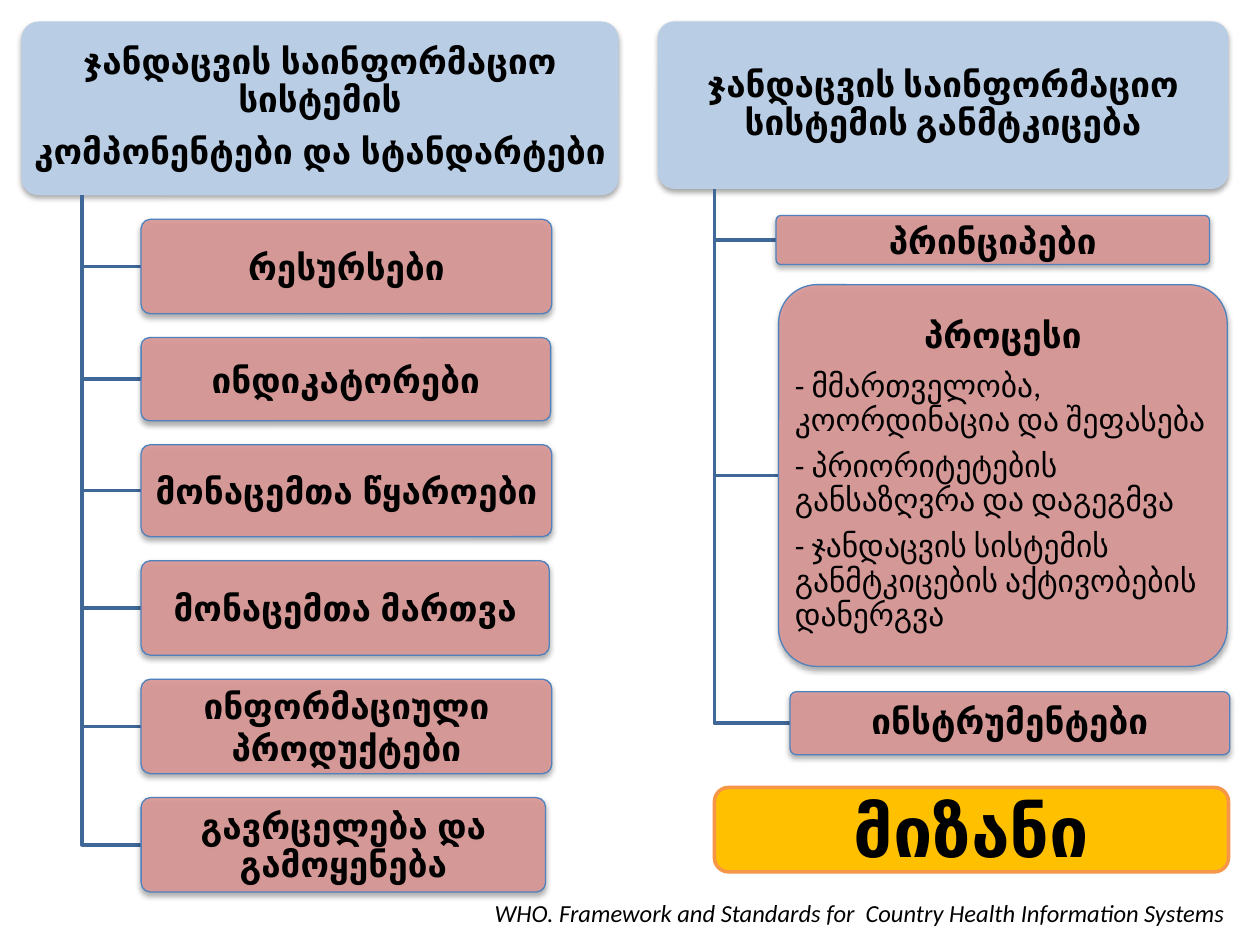
from dataclasses import dataclass

import pptx
import pptx.dml.color
import pptx.enum.shapes
import pptx.enum.text
import pptx.oxml
import pptx.oxml.ns
import pptx.util
from pptx.dml.color import RGBColor
from pptx.util import Inches

BLACK = RGBColor(0x00, 0x00, 0x00)
HEADER_BLUE = RGBColor(0xB9, 0xCD, 0xE5)
ITEM_ROSE = RGBColor(0xD9, 0x96, 0x94)
ITEM_EDGE = RGBColor(0x4F, 0x81, 0xBD)
BRANCH_BLUE = RGBColor(0x3F, 0x67, 0x97)
GOAL_YELLOW = RGBColor(0xFF, 0xC0, 0x00)
GOAL_EDGE = RGBColor(0xF7, 0x96, 0x46)

LEFT = pptx.enum.text.PP_ALIGN.LEFT
CENTER = pptx.enum.text.PP_ALIGN.CENTER
RIGHT = pptx.enum.text.PP_ALIGN.RIGHT
ROUNDED = pptx.enum.shapes.MSO_SHAPE.ROUNDED_RECTANGLE
MIDDLE = pptx.enum.text.MSO_ANCHOR.MIDDLE


@dataclass
class Line:
    text: str
    size: int = 20
    bold: bool = True
    align: pptx.enum.text.PP_ALIGN = CENTER
    tight: bool = True


@dataclass
class Card:
    left: float
    top: float
    width: float
    height: float
    lines: list[Line]


@dataclass
class Branch:
    header: Card
    trunk: float
    font: str
    items: list[Card]


def title(text: str) -> list[Line]:
    return [Line(text, tight=False)]


def step(text: str) -> Line:
    return Line(text, size=18, bold=False, align=LEFT)


COMPONENTS = Branch(
    Card(0.17, 0.17, 4.74, 1.38, [
        Line("ჯანდაცვის საინფორმაციო სისტემის"),
        Line("კომპონენტები და სტანდარტები"),
    ]),
    0.65, "Arial",
    [
        Card(1.12, 1.74, 3.26, 0.75, title("რესურსები")),
        Card(1.12, 2.68, 3.25, 0.66, title("ინდიკატორები")),
        Card(1.12, 3.53, 3.26, 0.73, title("მონაცემთა წყაროები")),
        Card(1.12, 4.45, 3.24, 0.75, title("მონაცემთა მართვა")),
        Card(1.12, 5.39, 3.26, 0.75, title("ინფორმაციული პროდუქტები")),
        Card(1.12, 6.33, 3.21, 0.75,
             title("გავრცელება და") + [Line("გამოყენება")]),
    ],
)
STRENGTHENING = Branch(
    Card(5.22, 0.17, 4.53, 1.33,
         [Line("ჯანდაცვის საინფორმაციო სისტემის განმტკიცება")]),
    5.67, "Calibri",
    [
        Card(6.16, 1.71, 3.44, 0.39, title("პრინციპები")),
        Card(6.18, 2.26, 3.56, 3.03, [
            Line("პროცესი"),
            step("- მმართველობა, კოორდინაცია და შეფასება"),
            step("- პრიორიტეტების განსაზღვრა და დაგეგმვა"),
            step("- ჯანდაცვის სისტემის განმტკიცების აქტივობების დანერგვა"),
        ]),
        Card(6.27, 5.49, 3.49, 0.5, [Line("ინსტრუმენტები")]),
    ],
)


def add_text(para, text: str, *, font: str, size: int, bold: bool = False,
             italic: bool = False, align=CENTER) -> None:
    para.alignment = align
    span = para.add_run()
    span.text = text
    span.font.name = font
    span.font.size = pptx.util.Pt(size)
    span.font.bold = bold
    span.font.italic = italic
    span.font.color.rgb = BLACK


def add_soft_shadow(shape) -> None:
    namespace = pptx.oxml.ns.nsdecls("a")
    effects = pptx.oxml.parse_xml(
        f'<a:effectLst {namespace}><a:outerShdw blurRad="40000" dist="23000" '
        'dir="5400000" rotWithShape="0"><a:srgbClr val="000000">'
        '<a:alpha val="35000"/></a:srgbClr></a:outerShdw></a:effectLst>')
    properties = shape._element.spPr
    for old in properties.findall(pptx.oxml.ns.qn("a:effectLst")):
        properties.remove(old)
    properties.append(effects)


def set_opacity(shape, percent: int) -> None:
    color = shape._element.spPr.find(
        pptx.oxml.ns.qn("a:solidFill") + "/" + pptx.oxml.ns.qn("a:srgbClr"))
    alpha = color.makeelement(pptx.oxml.ns.qn("a:alpha"),
                              {"val": str(percent * 1000)})
    color.append(alpha)


def add_box(page, card: Card, font: str, fill: RGBColor,
            edge: RGBColor | None = None, weight: float = 0.75):
    box = page.shapes.add_shape(ROUNDED, Inches(card.left), Inches(card.top),
                                Inches(card.width), Inches(card.height))
    box.shadow.inherit = False
    box.fill.solid()
    box.fill.fore_color.rgb = fill
    if edge is None:
        box.line.fill.background()
    else:
        box.line.color.rgb = edge
        box.line.width = pptx.util.Pt(weight)
    frame = box.text_frame
    frame.word_wrap = True
    frame.vertical_anchor = MIDDLE
    frame.margin_left = frame.margin_right = Inches(0.04)
    frame.margin_top = frame.margin_bottom = Inches(0.03)
    for index, line in enumerate(card.lines):
        para = frame.add_paragraph() if index else frame.paragraphs[0]
        add_text(para, line.text, font=font, size=line.size, bold=line.bold,
                 align=line.align)
        if line.tight:
            para.line_spacing = 0.9
            para.space_after = pptx.util.Pt(round(line.size * 0.4))
    return box


def add_elbow(page, trunk: float, start: float, card: Card) -> None:
    """Draw down the trunk and across to the middle of the card's left side."""
    middle = Inches(card.top + card.height / 2)
    builder = page.shapes.build_freeform(Inches(trunk), Inches(start))
    builder.add_line_segments(
        [(Inches(trunk), middle), (Inches(card.left), middle)], close=False)
    elbow = builder.convert_to_shape()
    elbow.shadow.inherit = False
    elbow.fill.background()
    elbow.line.color.rgb = BRANCH_BLUE
    elbow.line.width = pptx.util.Pt(2)


def add_branch(page, branch: Branch) -> None:
    header = branch.header
    add_soft_shadow(add_box(page, header, branch.font, HEADER_BLUE))
    for card in branch.items:
        add_elbow(page, branch.trunk, header.top + header.height, card)
        box = add_box(page, card, branch.font, ITEM_ROSE, ITEM_EDGE)
        adjustment = 0.1
        box.adjustments[0] = adjustment
        set_opacity(box, 90)
        add_soft_shadow(box)


def main() -> None:
    deck = pptx.Presentation()
    deck.slide_width, deck.slide_height = Inches(10), Inches(7.5)
    page = deck.slides.add_slide(deck.slide_layouts[6])
    for branch in (COMPONENTS, STRENGTHENING):
        add_branch(page, branch)
    for header in (shape for shape in page.shapes
                   if shape.top == Inches(COMPONENTS.header.top)):
        header.adjustments[0] = 0.1

    goal = Card(5.67, 6.25, 4.08, 0.67, [Line("მიზანი", 40, tight=False)])
    add_box(page, goal, "Calibri", GOAL_YELLOW, GOAL_EDGE, 2)

    citation = page.shapes.add_textbox(Inches(2.83), Inches(7.08),
                                       Inches(6.99), Inches(0.34))
    citation.text_frame.word_wrap = True
    add_text(citation.text_frame.paragraphs[0],
             "WHO. Framework and Standards for  Country Health Information Systems",
             font="Calibri", size=14, italic=True, align=RIGHT)
    deck.save("out.pptx")


if __name__ == "__main__":
    main()
